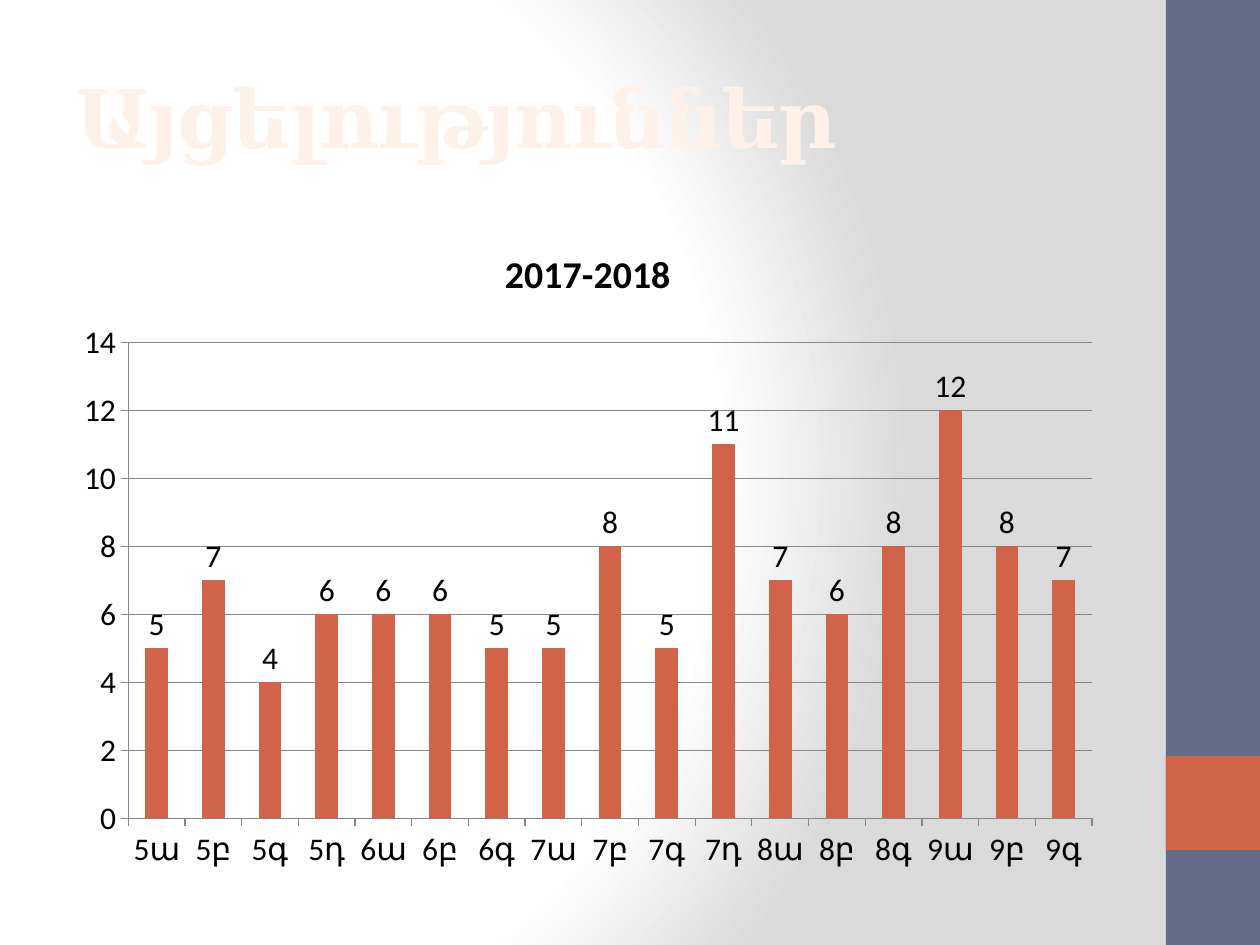
import dataclasses

import pptx
import pptx.chart.data
import pptx.dml.color
import pptx.enum.chart
import pptx.enum.shapes
import pptx.enum.text
import pptx.oxml
import pptx.oxml.ns
import pptx.util


@dataclasses.dataclass(frozen=True)
class Theme:
    slate: str = "646B86"
    rust: str = "D16349"
    cream: str = "FEF1EA"
    amber: str = "C86D09"
    white: str = "FFFFFF"
    grey: str = "DADADA"
    line: str = "878787"
    ink: str = "000000"
    serif: str = "Cambria"
    sans: str = "Calibri"
    head: float = 46
    label: float = 18
    caption: float = 21.6


THEME = Theme()
SCALE = 914400 / 126
COUNTS = {
    "5ա": 5, "5բ": 7, "5գ": 4, "5դ": 6,
    "6ա": 6, "6բ": 6, "6գ": 5,
    "7ա": 5, "7բ": 8, "7գ": 5, "7դ": 11,
    "8ա": 7, "8բ": 6, "8գ": 8,
    "9ա": 12, "9բ": 8, "9գ": 7,
}


def px(count):
    return pptx.util.Emu(round(count * SCALE))


def rgb(code):
    return pptx.dml.color.RGBColor.from_string(code)


def style(font, face, size, color, bold=False):
    font.name = face
    font.size = pptx.util.Pt(size)
    font.bold = bold
    font.color.rgb = rgb(color)


def add_glow(slide):
    """Set the round white-to-grey gradient as background."""
    stops = ((0, THEME.white), (75, THEME.white), (100, THEME.grey))
    marks = "".join(
        f'<a:gs pos="{spot * 1000}"><a:srgbClr val="{color}"/></a:gs>'
        for spot, color in stops)
    back = pptx.oxml.parse_xml(
        f'<p:bg {pptx.oxml.ns.nsdecls("p", "a")}><p:bgPr>'
        f'<a:gradFill rotWithShape="1"><a:gsLst>{marks}</a:gsLst>'
        '<a:path path="circle">'
        '<a:fillToRect l="20000" t="50000" r="100000" b="50000"/>'
        '</a:path></a:gradFill><a:effectLst/></p:bgPr></p:bg>')
    slide.element.cSld.insert(0, back)


def add_block(slide, left, top, width, height, color):
    block = slide.shapes.add_shape(
        pptx.enum.shapes.MSO_SHAPE.RECTANGLE,
        px(left), px(top), px(width), px(height))
    block.shadow.inherit = False
    block.fill.solid()
    block.fill.fore_color.rgb = rgb(color)
    block.line.fill.background()


def set_title(slide, text):
    title = slide.shapes.title
    title.left, title.top = px(63), px(38)
    title.width, title.height = px(1050), px(157)
    frame = title.text_frame
    frame.word_wrap = True
    frame.vertical_anchor = pptx.enum.text.MSO_ANCHOR.MIDDLE
    para = frame.paragraphs[0]
    para.alignment = pptx.enum.text.PP_ALIGN.LEFT
    run = para.add_run()
    run.text = text
    style(run.font, THEME.serif, THEME.head, THEME.cream, bold=True)
    props = run.font._element
    props.set("spc", "-100")
    width = pptx.util.Pt(2.48)
    props.insert(0, pptx.oxml.parse_xml(
        f'<a:ln {pptx.oxml.ns.nsdecls("a")} w="{width}"><a:solidFill>'
        f'<a:srgbClr val="{THEME.amber}"/></a:solidFill></a:ln>'))


def set_line(line):
    line.color.rgb = rgb(THEME.line)
    line.width = pptx.util.Pt(0.75)


def set_axis(axis):
    axis.major_tick_mark = pptx.enum.chart.XL_TICK_MARK.OUTSIDE
    axis.minor_tick_mark = pptx.enum.chart.XL_TICK_MARK.NONE
    set_line(axis.format.line)


def add_bars(slide, name, counts):
    kinds = pptx.enum.chart
    data = pptx.chart.data.CategoryChartData()
    data.categories = list(counts)
    data.add_series(name, list(counts.values()))
    chart = slide.shapes.add_chart(
        kinds.XL_CHART_TYPE.COLUMN_CLUSTERED,
        px(63), px(220), px(1050), px(662), data).chart
    style(chart.font, THEME.sans, THEME.label, THEME.ink)
    chart.has_legend = False
    chart.has_title = True
    run = chart.chart_title.text_frame.paragraphs[0].add_run()
    run.text = name
    style(run.font, THEME.sans, THEME.caption, THEME.ink, bold=True)

    set_axis(chart.category_axis)
    set_axis(chart.value_axis)
    chart.value_axis.has_major_gridlines = True
    set_line(chart.value_axis.major_gridlines.format.line)

    plot = chart.plots[0]
    plot.gap_width = 150
    plot.vary_by_categories = False
    bars = plot.series[0]
    bars.format.fill.solid()
    bars.format.fill.fore_color.rgb = rgb(THEME.rust)
    labels = bars.data_labels
    labels.show_value = True
    labels.position = kinds.XL_LABEL_POSITION.OUTSIDE_END


def main():
    deck = pptx.Presentation()
    deck.slide_width, deck.slide_height = px(1260), px(945)
    slide = deck.slides.add_slide(deck.slide_layouts[5])
    add_glow(slide)
    add_block(slide, 1166, 0, 94, 945, THEME.slate)
    add_block(slide, 1166, 756, 94, 94, THEME.rust)
    set_title(slide, "Այցելություններ")
    add_bars(slide, "2017-2018", COUNTS)
    deck.save("out.pptx")


if __name__ == "__main__":
    main()
